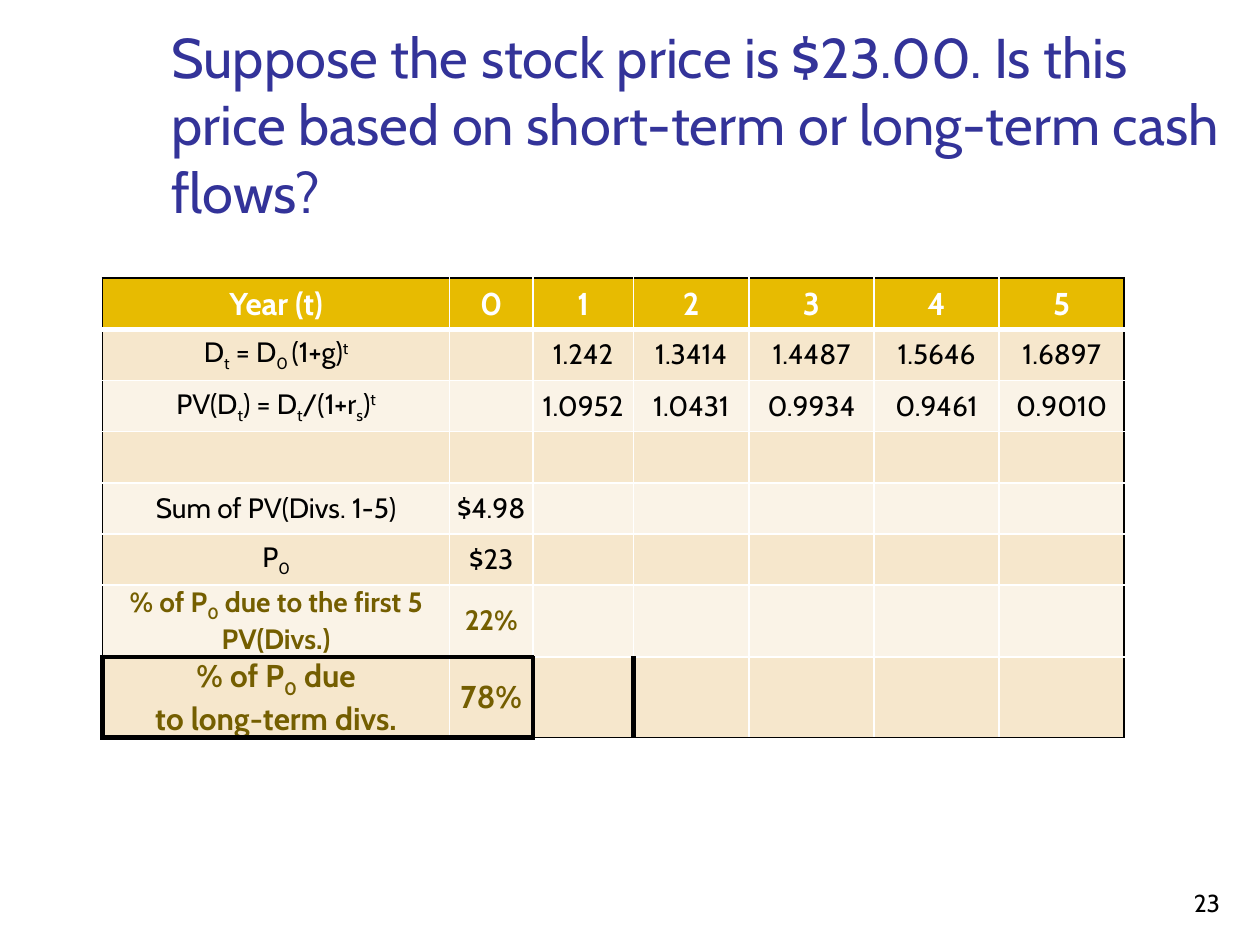
import pptx
import pptx.dml.color
import pptx.enum.text
import pptx.oxml.ns
import pptx.util
from lxml import etree

Pt = pptx.util.Pt
RGBColor = pptx.dml.color.RGBColor
Align = pptx.enum.text.PP_ALIGN
Anchor = pptx.enum.text.MSO_ANCHOR

FONT = "Cabin"
BLACK = RGBColor(0x00, 0x00, 0x00)
WHITE = RGBColor(0xFF, 0xFF, 0xFF)
INDIGO = RGBColor(0x33, 0x33, 0x99)
GOLD = RGBColor(0xE7, 0xBB, 0x01)
OLIVE = RGBColor(0x74, 0x5E, 0x00)
SAND = RGBColor(0xF6, 0xE7, 0xCC)
CREAM = RGBColor(0xFA, 0xF3, 0xE7)

SUB, SUPER = -25000, 30000
COLUMN_WIDTHS = [198.5, 47.5, 57.5, 66, 71.5, 71.5, 71.5]
ROW_HEIGHT = 29.25
YEARS = ["Year (t)", "0", "1", "2", "3", "4", "5"]
DIVIDEND = [[("D", 0), ("t", SUB), (" = D", 0), ("0 ", SUB), ("(1+g)", 0), ("t", SUPER)]]
PRESENT_VALUE = [[("PV(D", 0), ("t", SUB), (") = D", 0), ("t", SUB),
                  ("/(1+r", 0), ("s", SUB), (")", 0), ("t", SUPER)]]
PRICE = [[("P", 0), ("0", SUB)]]
SHORT_TERM = [[("% of P", 0), ("0", SUB), (" due to the first 5 PV(Divs.)", 0)]]
LONG_TERM = [[("% of P", 0), ("0", SUB), (" due", 0)], [("to long-term divs.", 0)]]
ROWS = [
    YEARS,
    [DIVIDEND, "", "1.242", "1.3414", "1.4487", "1.5646", "1.6897"],
    [PRESENT_VALUE, "", "1.0952", "1.0431", "0.9934", "0.9461", "0.9010"],
    [],
    ["Sum of PV(Divs. 1-5)", "$4.98"],
    [PRICE, "$23"],
    [SHORT_TERM, "22%"],
    [LONG_TERM, "78%"],
]
LAST_ROW, LAST_COLUMN = len(ROWS) - 1, len(COLUMN_WIDTHS) - 1


def format_font(font, size, color, bold=False):
    """Apply the slide font with a size, colour and weight."""
    font.name, font.size, font.bold = FONT, Pt(size), bold
    font.color.rgb = color


def add_text(slide, text, box, size, color, alignment):
    """Add a bottom-anchored, wrapping text box."""
    frame = slide.shapes.add_textbox(*map(Pt, box)).text_frame
    frame.word_wrap = True
    frame.vertical_anchor = Anchor.BOTTOM
    frame.text = text
    paragraph = frame.paragraphs[0]
    paragraph.alignment = alignment
    format_font(paragraph.runs[0].font, size, color)


def row_style(row):
    """Return the fill, text size, text colour and weight of a row."""
    if row == 0:
        return GOLD, 18, WHITE, True
    fill = SAND if row % 2 else CREAM
    if row >= LAST_ROW - 1:
        return fill, 18 if row == LAST_ROW else 16, OLIVE, True
    return fill, 16, BLACK, False


def cell_borders(row, column):
    """Return the colour and width of each side of a cell."""
    borders = dict.fromkeys("LRTB", (WHITE, 1))
    outer = {"L": column == 0, "R": column == LAST_COLUMN,
             "T": row == 0, "B": row == LAST_ROW}
    borders.update({side: (BLACK, 1) for side, on_edge in outer.items() if on_edge})
    if row == 0:
        borders["B"] = (WHITE, 3)
    if row == 1:
        borders["T"] = (WHITE, 3)
    boxed = column < 2
    if row == LAST_ROW - 1 and boxed:
        borders["B"] = (BLACK, 3)
    if row == LAST_ROW:
        if boxed:
            borders.update(T=(BLACK, 3), B=(BLACK, 3))
        if column in (0, 2):
            borders["L"] = (BLACK, 3)
        if column in (1, 2):
            borders["R"] = (BLACK, 3)
        if column == 3:
            borders["L"] = (BLACK, 3)
    return borders


def draw_borders(cell, borders):
    """Write the border lines ahead of the fill of a cell."""
    qn = pptx.oxml.ns.qn
    properties = cell._tc.get_or_add_tcPr()
    for index, (side, (color, width)) in enumerate(borders.items()):
        line = etree.Element(qn("a:ln" + side), w=str(Pt(width)))
        fill = etree.SubElement(line, qn("a:solidFill"))
        etree.SubElement(fill, qn("a:srgbClr"), val=str(color))
        properties.insert(index, line)


def fill_cell(cell, content, style):
    """Set the fill, the centred text and the raised or lowered runs of a cell."""
    fill, size, color, bold = style
    cell.fill.solid()
    cell.fill.fore_color.rgb = fill
    cell.margin_left = cell.margin_right = cell.margin_top = cell.margin_bottom = 0
    cell.vertical_anchor = Anchor.MIDDLE
    if not content:
        return
    lines = [[(content, 0)]] if isinstance(content, str) else content
    frame = cell.text_frame
    for index, line in enumerate(lines):
        paragraph = frame.add_paragraph() if index else frame.paragraphs[0]
        paragraph.alignment = Align.CENTER
        for text, baseline in line:
            run = paragraph.add_run()
            run.text = text
            format_font(run.font, size, color, bold)
            if baseline:
                run._r.get_or_add_rPr().set("baseline", str(baseline))


def add_dividend_table(slide):
    """Add the table of dividends and their share of the price."""
    table = slide.shapes.add_table(
        len(ROWS), len(COLUMN_WIDTHS), Pt(58.5), Pt(159),
        Pt(sum(COLUMN_WIDTHS)), Pt(ROW_HEIGHT * len(ROWS))).table
    table.horz_banding = table.first_row = False
    for column, width in zip(table.columns, COLUMN_WIDTHS):
        column.width = Pt(width)
    for row, contents in enumerate(ROWS):
        table.rows[row].height = Pt(ROW_HEIGHT)
        for column in range(len(COLUMN_WIDTHS)):
            cell = table.cell(row, column)
            content = contents[column] if column < len(contents) else ""
            fill_cell(cell, content, row_style(row))
            draw_borders(cell, cell_borders(row, column))


def main():
    """Build the slide and save it."""
    presentation = pptx.Presentation()
    presentation.slide_width, presentation.slide_height = Pt(720), Pt(540)
    slide = presentation.slides.add_slide(presentation.slide_layouts[6])
    add_text(slide, "Suppose the stock price is $23.00. Is this price based on "
             "short-term or long-term cash flows?",
             (90.75, 16.5, 613.5, 115.25), 32, INDIGO, Align.LEFT)
    add_dividend_table(slide)
    add_text(slide, "23", (554.5, 492, 149.75, 36), 14, BLACK, Align.RIGHT)
    presentation.save("out.pptx")


if __name__ == "__main__":
    main()
